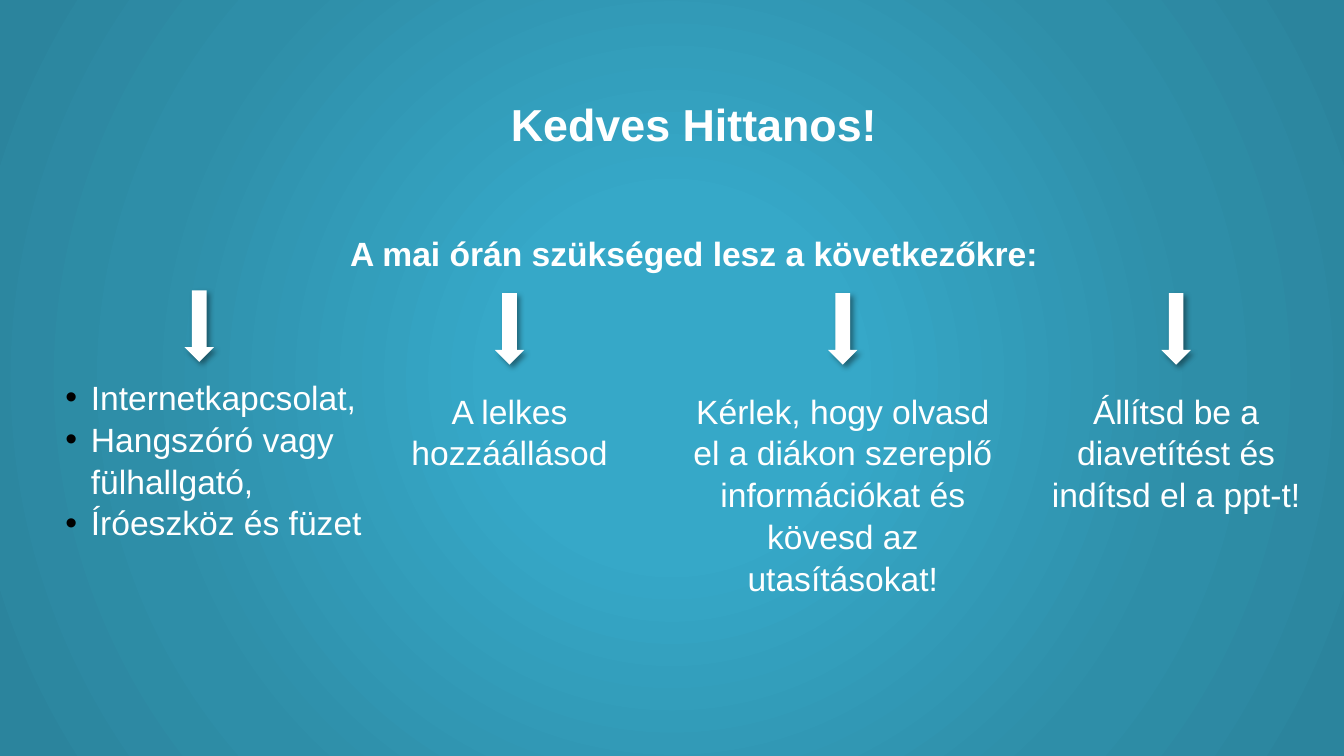
"""Build the welcome slide that lists what pupils need for today's lesson."""
from dataclasses import dataclass

from lxml import etree
from pptx import Presentation
from pptx import util as u
from pptx.dml.color import RGBColor
from pptx.enum import shapes, text
from pptx.oxml import parse_xml
from pptx.oxml.ns import nsdecls, qn

WHITE = RGBColor(0xFF, 0xFF, 0xFF)
BLACK = RGBColor(0, 0, 0)
BRIGHT = RGBColor(0x36, 0xA8, 0xC8)
MIDDLE = RGBColor(0x2E, 0x8E, 0xA8)
DEEP = RGBColor(0x2B, 0x84, 0x9D)
BACKGROUND_STOPS = [(0, BRIGHT), (23, BRIGHT), (69, MIDDLE), (97, DEEP)]

FONT = "Arial"
LINE_SPACING = 1.04
COLUMN_TOP = 9.8
FIRST_CENTRE = 12.84
COLUMN_PITCH = 8.4
ARROW_WIDTH, ARROW_HEIGHT, ARROW_TOP = 0.74, 1.8, 7.39


@dataclass
class Column:
    """A centred text below its arrow, in centimetres."""

    words: str
    width: float
    height: float


@dataclass
class Arrow:
    """A down arrow given by its centre line and top, in centimetres."""

    centre: float
    top: float


COLUMNS = [
    Column("A lelkes hozzáállásod", 6.88, 3.18),
    Column("Kérlek, hogy olvasd el a diákon szereplő információkat és kövesd az utasításokat!",
           8.08, 8.3),
    Column("Állítsd be a diavetítést és indítsd el a ppt-t!", 6.88, 3.18),
]
SUPPLIES = ["Internetkapcsolat,", "Hangszóró vagy fülhallgató,", "Íróeszköz és füzet"]


def set_background(slide) -> None:
    """Fill the slide with a circular gradient."""
    stops = "".join(f'<a:gs pos="{pos * 1000}"><a:srgbClr val="{color}"/></a:gs>'
                    for pos, color in BACKGROUND_STOPS)
    slide.background.fill.solid()
    bg_pr = slide.element.cSld.bg.bgPr
    bg_pr.replace(bg_pr[0], parse_xml(
        f'<a:gradFill {nsdecls("a")} rotWithShape="1"><a:gsLst>{stops}</a:gsLst>'
        '<a:path path="circle"><a:fillToRect l="50000" t="50000" r="50000" b="50000"/>'
        '</a:path></a:gradFill>'))


def place(sp, left: float, top: float, width: float, height: float) -> None:
    """Move and size a shape in centimetres."""
    sp.left, sp.top, sp.width, sp.height = map(u.Cm, (left, top, width, height))


def write(sp, words: list[str], size: int = 24, bold: bool = False,
          align=text.PP_ALIGN.CENTER) -> None:
    """Set one paragraph per entry and format it without inner margins."""
    tf = sp.text_frame
    tf.text = "\n".join(words)
    tf.word_wrap = True
    tf.auto_size = text.MSO_AUTO_SIZE.NONE
    tf.vertical_anchor = text.MSO_ANCHOR.TOP
    tf.margin_left = tf.margin_right = tf.margin_top = tf.margin_bottom = 0
    for p in tf.paragraphs:
        p.alignment = align
        p.line_spacing = LINE_SPACING
        p.space_before = p.space_after = u.Pt(0)
        for r in p.runs:
            r.font.name, r.font.size, r.font.bold = FONT, u.Pt(size), bold
            r.font.color.rgb = WHITE


def add_bullets(sp) -> None:
    """Give each paragraph a hanging black bullet."""
    for p in sp.text_frame.paragraphs:
        p_pr = p._p.get_or_add_pPr()
        p_pr.set("marL", str(u.Cm(0.64)))
        p_pr.set("indent", str(-u.Cm(0.64)))
        color = etree.SubElement(p_pr, qn("a:buClr"))
        etree.SubElement(color, qn("a:srgbClr"), val=str(BLACK))
        etree.SubElement(p_pr, qn("a:buFont"), typeface=FONT)
        etree.SubElement(p_pr, qn("a:buChar"), char="•")


def add_text(slide, words: str, left: float, top: float, width: float, height: float,
             bold: bool = False) -> None:
    """Add a centred text box."""
    sp = slide.shapes.add_textbox(0, 0, 0, 0)
    place(sp, left, top, width, height)
    write(sp, [words], bold=bold)


def add_arrow(slide, arrow: Arrow) -> None:
    """Add a white down arrow with a soft shadow."""
    sp = slide.shapes.add_shape(shapes.MSO_SHAPE.DOWN_ARROW, 0, 0, 0, 0)
    place(sp, arrow.centre - ARROW_WIDTH / 2, arrow.top, ARROW_WIDTH, ARROW_HEIGHT)
    sp.fill.solid()
    sp.fill.fore_color.rgb = WHITE
    sp.line.fill.background()
    sp.shadow.inherit = False
    effects = sp.element.spPr.find(qn("a:effectLst"))
    effects.append(parse_xml(
        f'<a:outerShdw {nsdecls("a")} blurRad="{u.Pt(4)}" dist="{u.Pt(3)}" dir="2700000" '
        f'algn="tl" rotWithShape="0"><a:srgbClr val="{BLACK}"><a:alpha val="40000"/>'
        '</a:srgbClr></a:outerShdw>'))


def main() -> None:
    """Build and save the slide."""
    prs = Presentation()
    prs.slide_width, prs.slide_height = u.Cm(33.87), u.Cm(19.05)
    slide = prs.slides.add_slide(prs.slide_layouts[1])
    set_background(slide)

    title, supplies = slide.placeholders
    place(title, 4.65, 2.39, 25.68, 1.8)
    write(title, ["Kedves Hittanos!"], size=32, bold=True)
    place(supplies, 1.65, 9.45, 8.08, 4.34)
    write(supplies, SUPPLIES, align=text.PP_ALIGN.LEFT)
    add_bullets(supplies)

    add_text(slide, "A mai órán szükséged lesz a következőkre:", 8.46, 5.82, 18.06, 1.02, bold=True)
    add_arrow(slide, Arrow(5.02, 7.32))
    for i, column in enumerate(COLUMNS):
        centre = FIRST_CENTRE + i * COLUMN_PITCH
        add_text(slide, column.words, centre - column.width / 2, COLUMN_TOP,
                 column.width, column.height)
        add_arrow(slide, Arrow(centre, ARROW_TOP))
    prs.save("out.pptx")


if __name__ == "__main__":
    main()
